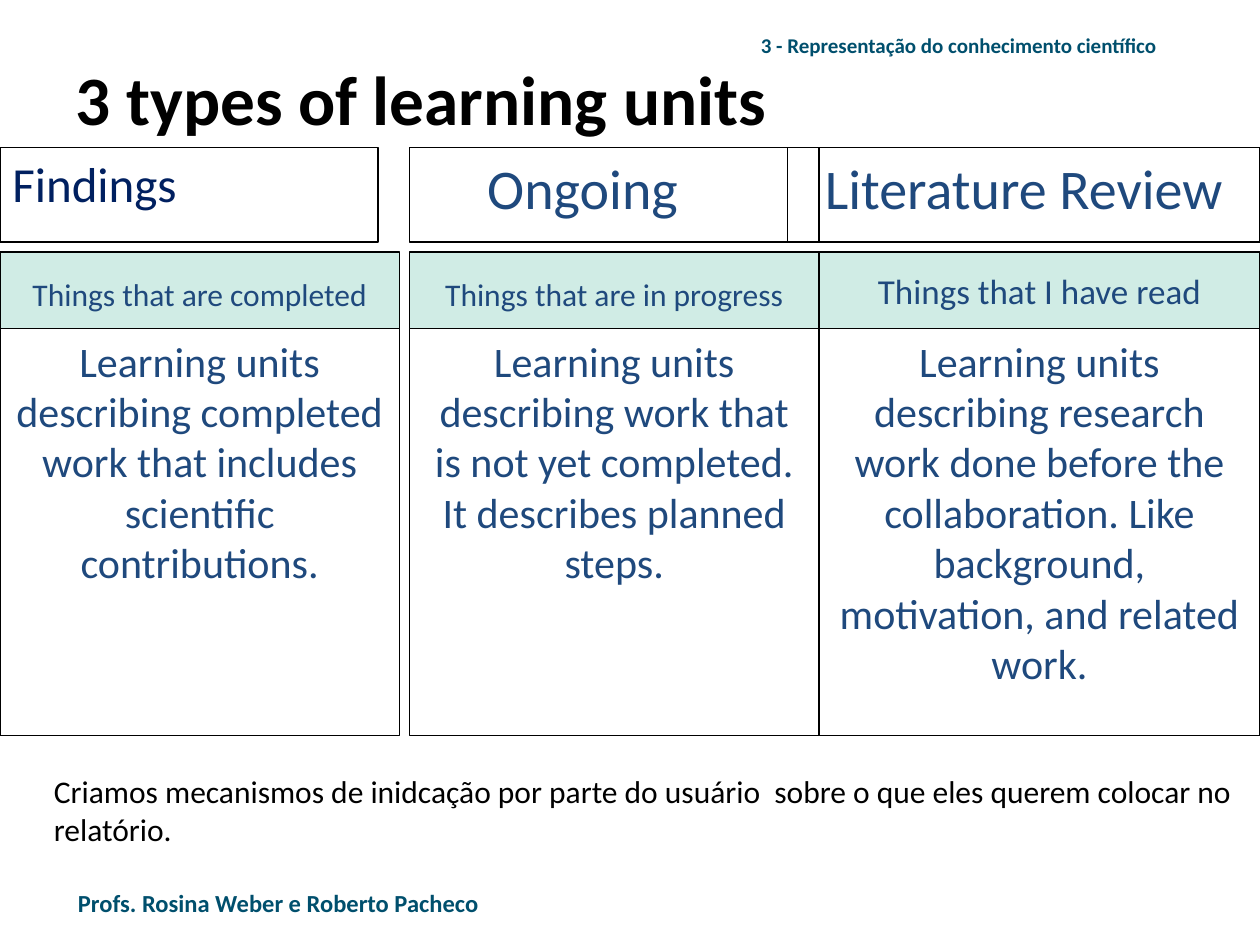
"""Build the slide on the three types of learning units."""
import pptx
import pptx.util
import pptx.dml.color
import pptx.enum.shapes
import pptx.enum.text

Inches, Pt = pptx.util.Inches, pptx.util.Pt
ALIGN, ANCHOR = pptx.enum.text.PP_ALIGN, pptx.enum.text.MSO_ANCHOR
COLORS = {"black": "000000", "teal": "004F6D", "navy": "002060",
          "blue": "1F497D", "mint": "D0ECE5"}


def rgb(name):
    return pptx.dml.color.RGBColor.from_string(COLORS[name])


def write(sp, text, size, color, bold=False, align=ALIGN.LEFT, anchor=ANCHOR.TOP):
    tf = sp.text_frame
    tf.text = text
    tf.word_wrap = True
    tf.vertical_anchor = anchor
    p = tf.paragraphs[0]
    p.alignment = align
    for r in p.runs:
        r.font.name = "Calibri"
        r.font.size = Pt(size)
        r.font.bold = bold
        r.font.color.rgb = rgb(color)
    return tf


prs = pptx.Presentation()
prs.slide_width, prs.slide_height = Inches(10), Inches(7.5)
s = prs.slides.add_slide(prs.slide_layouts[5])

title = s.shapes.title
title.left, title.top, title.width, title.height = map(Inches, (0.5, 0.83, 9, 0.62))
write(title, "3 types of learning units\v", 39.6, "black", True, anchor=ANCHOR.MIDDLE)

notes = [
    ((5.94, 0.21, 3.98, 0.3), "3 - Representação do conhecimento científico", 12, "teal", True),
    ((0.52, 7, 3.62, 0.34), "Profs. Rosina Weber e Roberto Pacheco", 14, "teal", True),
    ((0.33, 6.08, 9.67, 0.71), "Criamos mecanismos de inidcação por parte do usuário  sobre "
     "o que eles querem colocar no relatório.", 18, "black", False),
]
for box, text, size, color, bold in notes:
    write(s.shapes.add_textbox(*map(Inches, box)), text, size, color, bold)

heads = [("Findings", 0, 3, 28, "navy", ALIGN.LEFT, 0.1),
         ("Ongoing", 3.25, 3.25, 32, "blue", ALIGN.CENTER, 0.6),
         ("Literature Review", 6.25, 3.75, 32, "blue", ALIGN.CENTER, 0.1)]
columns = [
    (0, 3.17, "Things that are completed", 18, 0.1,
     "Learning units describing completed work that includes scientific contributions."),
    (3.25, 3.25, "Things that are in progress", 18, 0.1,
     "Learning units describing work that is not yet completed. It describes planned steps."),
    (6.5, 3.5, "Things that I have read", 20, 0.05,
     "Learning units describing research work done before the collaboration. "
     "Like background, motivation, and related work."),
]
rows = {"head": (1.17, 0.75), "summary": (2, 0.61), "detail": (2.61, 3.23)}

cells = []
for text, left, width, size, color, align, inset in heads:
    cells.append(("head", left, width, text, size, color, align, 0.05, inset))
for left, width, summary, size, inset, detail in columns:
    cells.append(("detail", left, width, detail, 24, "blue", ALIGN.CENTER, 0.05, 0.1))
    cells.append(("summary", left, width, summary, size, "blue", ALIGN.CENTER, inset, 0.1))

for row, left, width, text, size, color, align, top_inset, right_inset in cells:
    top, height = rows[row]
    sp = s.shapes.add_shape(pptx.enum.shapes.MSO_SHAPE.RECTANGLE,
                            *map(Inches, (left, top, width, height)))
    sp.shadow.inherit = False
    sp.line.color.rgb = rgb("black")
    sp.line.width = Pt(0.75)
    sp.fill.background()
    if row == "summary":
        sp.fill.solid()
        sp.fill.fore_color.rgb = rgb("mint")
    anchor = ANCHOR.MIDDLE if row == "summary" else ANCHOR.TOP
    tf = write(sp, text, size, color, align=align, anchor=anchor)
    tf.margin_top, tf.margin_right = Inches(top_inset), Inches(right_inset)

prs.save("out.pptx")
